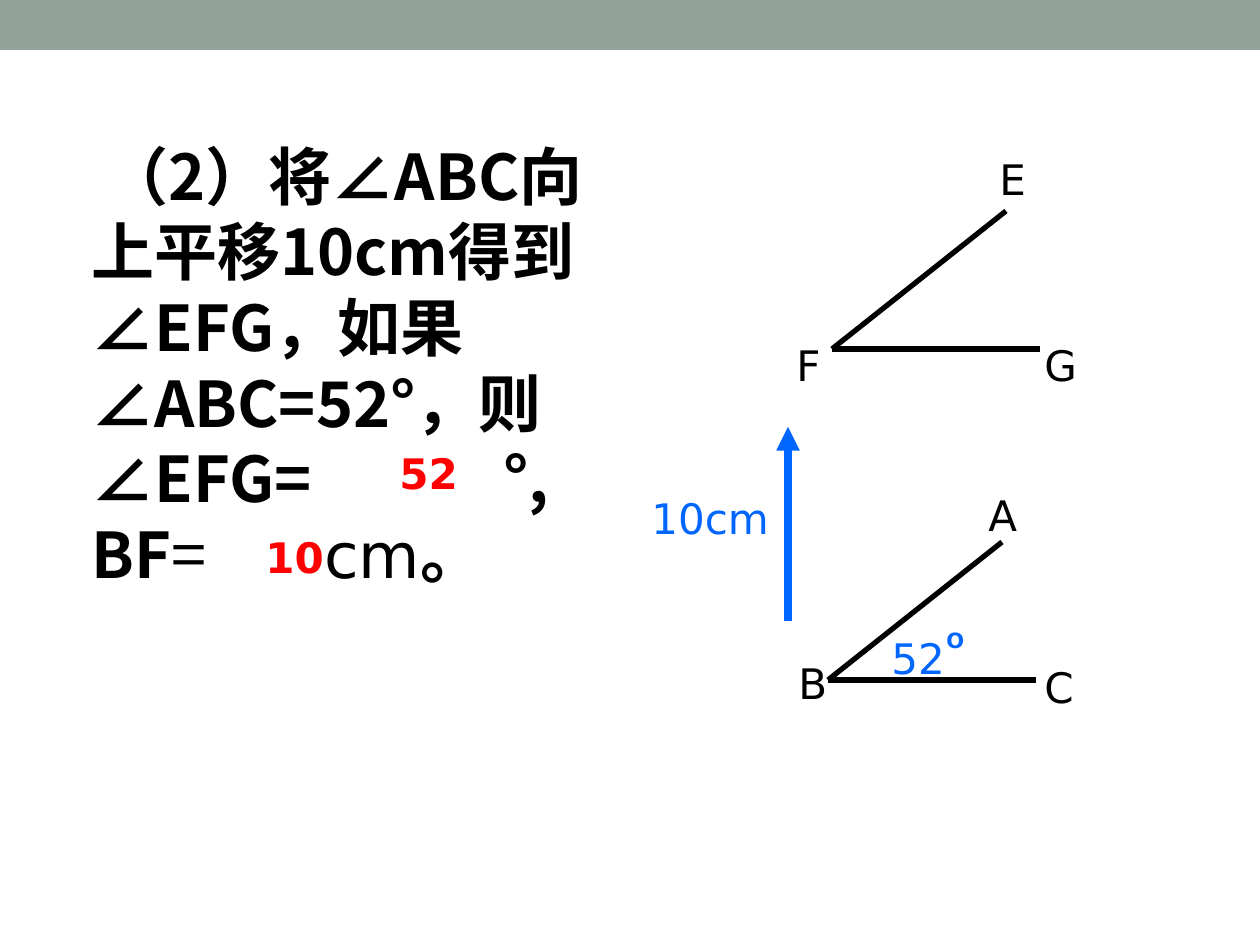
from pptx import Presentation
from pptx.dml.color import RGBColor as Rgb
from pptx.enum.shapes import MSO_CONNECTOR as Conn, MSO_SHAPE as Kind
from pptx.enum.text import MSO_AUTO_SIZE as Fit
from pptx.oxml.ns import qn
from pptx.util import Pt
from lxml.etree import SubElement as Sub

SCALE = 914400 / 126
HUES = {"band": "93A299", "ink": "000000", "blue": "0066FF", "red": "FF0000"}
SANS, HAN = "DejaVu Sans", "Noto Sans CJK SC"
BODY = {"size": Pt(36), "name": HAN, "bold": True}
LABEL = {"size": Pt(24), "name": SANS}
MARK = {"size": Pt(12), "name": SANS, "bold": True}
BOLD = {**LABEL, "bold": True}


def px(*vals):
    return [round(v * SCALE) for v in vals]


def hue(key):
    return Rgb.from_string(HUES[key])


def add_run(para, text, style, tint="ink"):
    run = para.add_run()
    run.text = text
    for key, val in style.items():
        setattr(run.font, key, val)
    run.font.color.rgb = hue(tint)
    Sub(run.font._element, qn("a:ea"), typeface=HAN)


def add_box(slide, spot, wrap):
    frame = slide.shapes.add_textbox(*px(*spot)).text_frame
    frame.word_wrap = wrap
    frame.auto_size = Fit.SHAPE_TO_FIT_TEXT
    return frame


def add_label(slide, text, spot, style=LABEL, tint="ink", wrap=False):
    frame = add_box(slide, spot, wrap)
    add_run(frame.paragraphs[0], text, style, tint)


def add_line(shapes, start, end, tint="ink", width=3, arrow=False):
    line = shapes.add_connector(Conn.STRAIGHT, *px(*start, *end))
    line.line.color.rgb = hue(tint)
    line.line.width = Pt(width)
    if arrow:
        Sub(line.line._get_or_add_ln(), qn("a:tailEnd"), type="triangle")
    Sub(line._element.spPr, qn("a:effectLst"))


def add_angle(slide, x, y):
    group = slide.shapes.add_group_shape()
    for dx, dy in ((174, -138), (208, 0)):
        add_line(group.shapes, (x, y), (x + dx, y + dy))


def add_band(slide):
    band = slide.shapes.add_shape(Kind.RECTANGLE, *px(0, 0, 1260, 50))
    band.shadow.inherit = False
    band.fill.solid()
    band.fill.fore_color.rgb = hue("band")
    band.line.fill.background()


def add_para(para, stop, runs):
    para.line_spacing = Pt(43.25)
    tabs = Sub(para._p.get_or_add_pPr(), qn("a:tabLst"))
    Sub(tabs, qn("a:tab"), pos=str(px(stop)[0]), algn="l")
    for text, extra in runs:
        add_run(para, text, {**BODY, **extra})


def add_task(slide):
    frame = add_box(slide, (79, 126, 536, 466), True)
    frame.margin_top, frame.margin_bottom = px(11, 1)
    blank = ("\t", {"underline": True})
    add_para(frame.paragraphs[0], 412, [
        (" （2）将∠ABC向上平移10cm得到∠EFG，如果∠ABC=52°，则∠EFG=", {}),
        blank, ("°,", {})])
    add_para(frame.add_paragraph(), 213, [
        ("BF", {}), ("=", {"bold": False}), blank,
        (" cm", {"name": SANS, "bold": False}), ("。", {"name": SANS})])


def main():
    deck = Presentation()
    deck.slide_width, deck.slide_height = px(1260, 945)
    slide = deck.slides.add_slide(deck.slide_layouts[6])
    add_band(slide)
    add_task(slide)
    add_label(slide, "52", (387, 441, 86, 63), BOLD, "red")
    add_angle(slide, 828, 680)
    add_line(slide.shapes, (788, 621), (788, 427), "blue", 4.5, True)
    add_label(slide, "10cm", (639, 486, 144, 63), LABEL, "blue", True)
    add_label(slide, "52", (879, 626, 89, 63), LABEL, "blue", True)
    for name, x, y, w in (
            ("B", 786, 651, 54), ("C", 1032, 655, 54), ("A", 976, 483, 54),
            ("F", 784, 333, 49), ("E", 987, 147, 52), ("G", 1032, 333, 58)):
        add_label(slide, name, (x, y, w, 63))
    add_label(slide, "O", (934, 621, 43, 38), MARK, "blue")
    add_label(slide, "10", (253, 525, 86, 63), BOLD, "red")
    add_angle(slide, 832, 349)
    deck.save("out.pptx")


if __name__ == "__main__":
    main()
